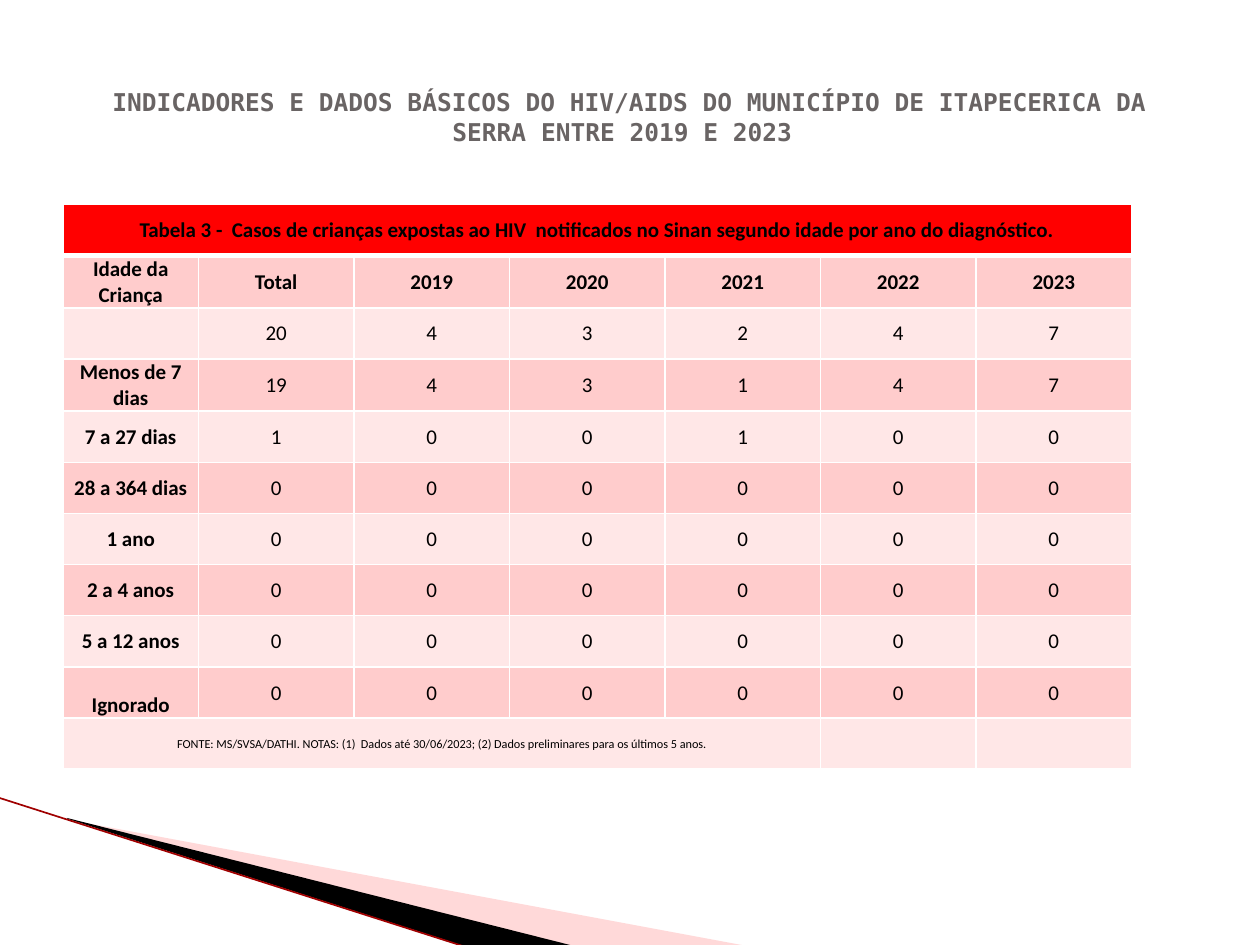
import lxml.etree
import pptx
import pptx.dml.color
import pptx.enum.shapes
import pptx.enum.text
import pptx.oxml.ns
import pptx.util

Cm, Pt = pptx.util.Cm, pptx.util.Pt
RGB = pptx.dml.color.RGBColor
ANCHOR = pptx.enum.text.MSO_ANCHOR
CENTER = pptx.enum.text.PP_ALIGN.CENTER
qn = pptx.oxml.ns.qn

WHITE = RGB(0xFF, 0xFF, 0xFF)
BLACK = RGB(0, 0, 0)
GREY = RGB(0x69, 0x64, 0x64)
RED = RGB(0xFF, 0, 0)
DARK_RED = RGB(0xA0, 0, 0)
ROSE = RGB(0xFF, 0xA2, 0xA2)
BAND_DARK = RGB(0xFF, 0xCC, 0xCC)
BAND_LIGHT = RGB(0xFF, 0xE7, 0xE7)

TITLE = ("INDICADORES E DADOS BÁSICOS DO HIV/AIDS DO MUNICÍPIO DE "
         "ITAPECERICA DA SERRA ENTRE 2019 E 2023 ")
CAPTION = ("Tabela 3 -  Casos de crianças expostas ao HIV  notificados no Sinan "
           "segundo idade por ano do diagnóstico.")
SOURCE = ("FONTE: MS/SVSA/DATHI. NOTAS: (1)  Dados até 30/06/2023; "
          "(2) Dados preliminares para os últimos 5 anos.")
HEADER = ["Idade da Criança", "Total", "2019", "2020", "2021", "2022", "2023"]
CASES = [
    ["", 20, 4, 3, 2, 4, 7],
    ["Menos de 7 dias", 19, 4, 3, 1, 4, 7],
    ["7 a 27 dias", 1, 0, 0, 1, 0, 0],
] + [[age] + [0] * 6 for age in (
    "28 a 364 dias", "1 ano", "2 a 4 anos", "5 a 12 anos", "Ignorado")]
ROWS = [[CAPTION], HEADER, *CASES, [SOURCE]]


def set_font(font, color, **formats):
    font.color.rgb = color
    for name, value in formats.items():
        setattr(font, name, value)


def set_frame(sp, left, top, width, height):
    """Change a freeform's frame while its outline stays in place."""
    dx, dy = sp.left - left, sp.top - top
    outline = sp._element.spPr.find(".//" + qn("a:path"))
    outline.set("w", str(width))
    outline.set("h", str(height))
    for pt in outline.iter(qn("a:pt")):
        pt.set("x", str(int(pt.get("x")) + dx))
        pt.set("y", str(int(pt.get("y")) + dy))
    sp.left, sp.top, sp.width, sp.height = left, top, width, height


def add_corner(s, left, top):
    """Draw the wedges and the line in the lower left corner."""
    wedges = [
        (ROSE, 40, (1.98, -2.19, 10.57, 4.01),
         [(1.4, 0.45), (15.11, 3), (11.58, 3), (1.4, 0.43)]),
        (BLACK, 100, (-0.15, 0, 10.57, 2.34),
         [(1.35, 0.41), (11.61, 3), (9.45, 3.02), (1.37, 0.43)]),
    ]
    for color, opacity, (x, y, width, height), points in wedges:
        points = [(left + Cm(px), top + Cm(py)) for px, py in points]
        builder = s.shapes.build_freeform(*points[0])
        builder.add_line_segments(points[1:])
        sp = builder.convert_to_shape()
        set_frame(sp, left + Cm(x), top + Cm(y), Cm(width), Cm(height))
        sp.shadow.inherit = False
        sp.line.fill.background()
        sp.fill.solid()
        sp.fill.fore_color.rgb = color
        if opacity < 100:
            rgb = sp._element.spPr.find(".//" + qn("a:srgbClr"))
            lxml.etree.SubElement(rgb, qn("a:alpha"), val=str(opacity * 1000))
    line = s.shapes.add_connector(
        pptx.enum.shapes.MSO_CONNECTOR.STRAIGHT,
        left - Cm(0.03), top, left + Cm(9.42), top + Cm(3.02))
    line.line.color.rgb = DARK_RED
    line.line.width = Pt(0.95)
    lxml.etree.SubElement(line._element.spPr, qn("a:effectLst"))


def add_title(s, left, top, width, height):
    sp = s.shapes.title
    sp.left, sp.top, sp.width, sp.height = left, top, width, height
    tf = sp.text_frame
    tf.word_wrap = True
    tf.vertical_anchor = ANCHOR.MIDDLE
    p = tf.paragraphs[0]
    p.alignment = CENTER
    r = p.add_run()
    r.text = TITLE
    set_font(r.font, GREY, name="DejaVu Sans Mono", size=Pt(14), bold=True)


def set_borders(cell, bottom):
    """Give a cell white borders; they must come before its fill."""
    tcPr = cell._tc.get_or_add_tcPr()
    for side, width in (("L", 1), ("R", 1), ("T", 1), ("B", bottom)):
        ln = lxml.etree.SubElement(tcPr, qn("a:ln" + side), w=str(Pt(width)))
        fill = lxml.etree.SubElement(ln, qn("a:solidFill"))
        lxml.etree.SubElement(fill, qn("a:srgbClr"), val=str(WHITE))


def format_cell(cell, text, fill, size, bold, bottom=1):
    set_borders(cell, bottom)
    cell.fill.solid()
    cell.fill.fore_color.rgb = fill
    cell.vertical_anchor = ANCHOR.MIDDLE
    cell.margin_left = cell.margin_right = cell.margin_top = Cm(0.02)
    cell.margin_bottom = 0
    cell.text = text
    p = cell.text_frame.paragraphs[0]
    p.alignment = CENTER
    for part in (p, *p.runs):
        set_font(part.font, BLACK, name="Calibri", size=Pt(size), bold=bold)


def add_cases_table(s, left, top, width, height):
    last = len(ROWS) - 1
    table = s.shapes.add_table(
        len(ROWS), len(HEADER), left, top, width, height).table
    first_width = Cm(2.73)
    for i, column in enumerate(table.columns):
        column.width = first_width if i == 0 else (width - first_width) // 6
    table.cell(0, 0).merge(table.cell(0, 6))
    table.cell(last, 0).merge(table.cell(last, 4))
    for i, values in enumerate(ROWS):
        fill = RED if i == 0 else BAND_DARK if i % 2 else BAND_LIGHT
        for j in range(len(HEADER)):
            text = str(values[j]) if j < len(values) else ""
            format_cell(table.cell(i, j), text, fill,
                        size=7 if i == last else 12,
                        bold=i < 2 or (j == 0 and i < last),
                        bottom=3 if i == 0 else 1)
    table.cell(last - 1, 0).vertical_anchor = ANCHOR.BOTTOM


def main():
    prs = pptx.Presentation()
    prs.slide_width, prs.slide_height = Cm(25.4), Cm(19.05)
    s = prs.slides.add_slide(prs.slide_layouts[5])
    add_corner(s, Cm(0), Cm(16.08))
    add_title(s, Cm(1.27), Cm(0.76), Cm(22.86), Cm(3.18))
    add_cases_table(s, Cm(1.27), Cm(4.12), Cm(21.54), Cm(11.35))
    prs.save("out.pptx")


if __name__ == "__main__":
    main()
